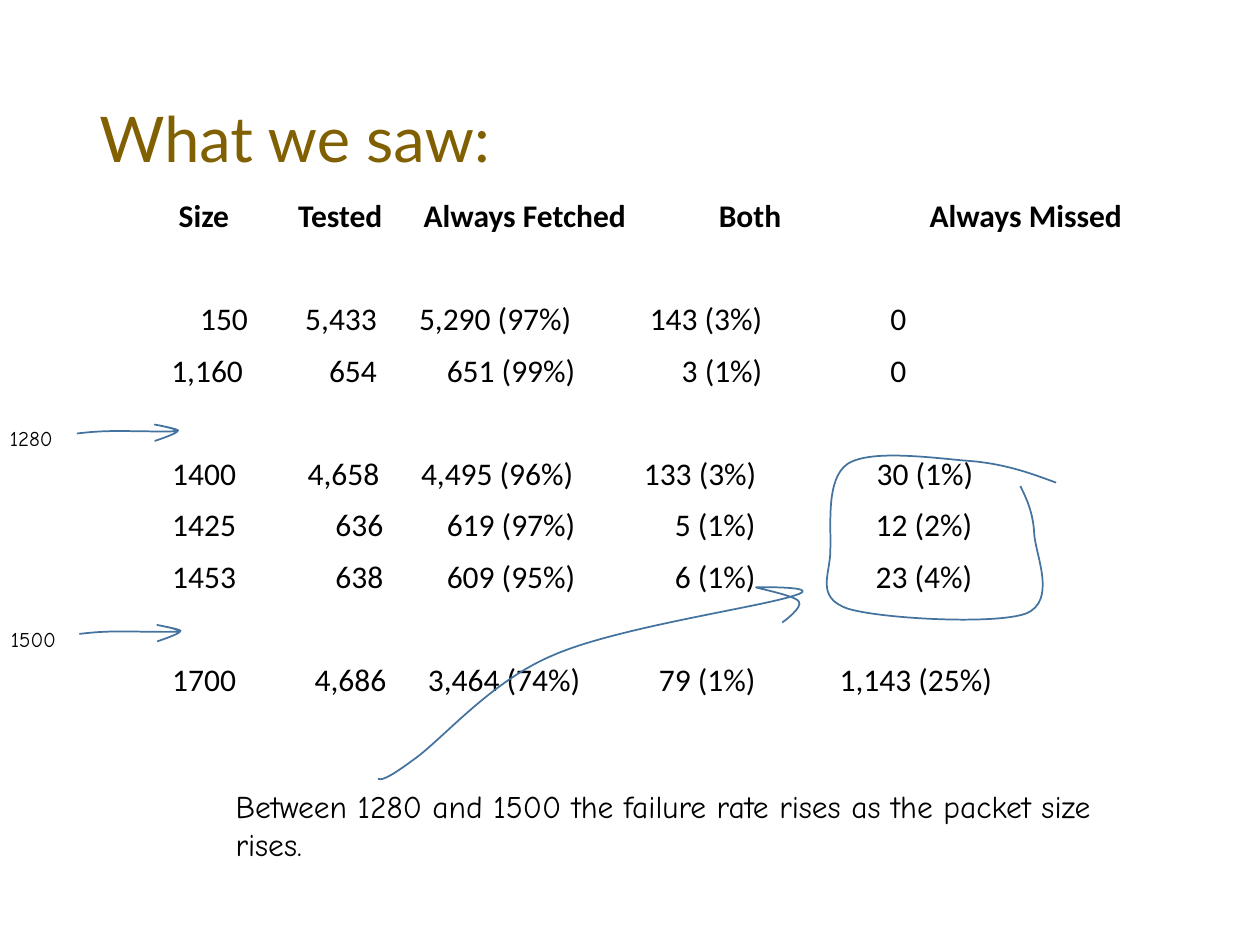
"""Build the slide of packet-size test results with its hand-drawn marks."""
import pptx
import pptx.dml.color
import pptx.enum.text
import pptx.oxml.ns
import pptx.util
from lxml import etree
from pptx.util import Cm, Pt

THEME = {
    "title": ("Lato", 36, "806000"),
    "body": ("Calibri", 18, "000000"),
    "note": ("Comic Neue", 18, "000000"),
    "label": ("Comic Neue", 12, "000000"),
    "ink": "43739E",
}
QN = pptx.oxml.ns.qn


def style(p, role, bold=False):
    name, size, color = THEME[role]
    for r in p.runs:
        r.font.name, r.font.size, r.font.bold = name, Pt(size), bold
        r.font.color.rgb = pptx.dml.color.RGBColor.from_string(color)


def draw_curve(s, points):
    emu = [(Cm(x), Cm(y)) for x, y in points]
    builder = s.shapes.build_freeform(*emu[0], scale=1.0)
    builder.add_line_segments(emu[1:], close=False)
    sp = builder.convert_to_shape()
    sp.shadow.inherit = False
    sp.fill.background()
    sp.line.color.rgb = pptx.dml.color.RGBColor.from_string(THEME["ink"])
    sp.line.width = Pt(1)
    steps = list(sp.element.iter(QN("a:lnTo")))
    for i in range(0, len(steps), 3):
        curve = etree.SubElement(steps[i].getparent(), QN("a:cubicBezTo"))
        for step in steps[i:i + 3]:
            curve.append(step[0])
            step.getparent().remove(step)


prs = pptx.Presentation()
prs.slide_width, prs.slide_height = Cm(25.4), Cm(19.05)
s = prs.slides.add_slide(prs.slide_layouts[5])

title = s.shapes.title
title.left, title.top, title.width, title.height = Cm(1.75), Cm(1.02), Cm(21.9), Cm(3.68)
tf = title.text_frame
tf.text = "What we saw:"
tf.vertical_anchor = pptx.enum.text.MSO_ANCHOR.MIDDLE
p = tf.paragraphs[0]
p.alignment = pptx.enum.text.PP_ALIGN.LEFT
p.line_spacing = 0.9
style(p, "title")

rows = [
    (("Size", "Tested", "Always Fetched", "Both", "Always Missed"),
     (1.39, 4.48, 9.39, 12.52, 19.39), 0),
    (("150", "5,433", "5,290 (97%)", "143 (3%)", "0"),
     (1.77, 4.37, 8.29, 12.14, 15.04), 39.5),
    (("1,160", "654", "651 (99%)", "3 (1%)", "0"),
     (1.67, 4.37, 8.37, 12.14, 15.04), 10),
    (("1400", "4,658", "4,495 (96%)", "133 (3%)", "30 (1%)"),
     (1.53, 4.42, 8.33, 12.02, 16.39), 39.5),
    (("1425", "636", "619 (97%)", "5 (1%)", "12 (2%)"),
     (1.53, 4.5, 8.37, 12, 16.37), 10),
    (("1453", "638", "609 (95%)", "6 (1%)", "23 (4%)"),
     (1.53, 4.5, 8.37, 12, 16.37), 10),
    (("1700", "4,686", "3,464 (74%)", "79 (1%)", "1,143 (25%)"),
     (1.53, 4.56, 8.47, 12, 16.77), 39.5),
]
results = s.shapes.add_textbox(Cm(3.23), Cm(3.91), Cm(20.45), Cm(12.09))
tf = results.text_frame
tf.word_wrap = True
tf.margin_left = 0
tf.text = "\n".join("\t" + "\t".join(cells) for cells, _, _ in rows)
for i, (p, (_, stops, gap)) in enumerate(zip(tf.paragraphs, rows)):
    p.line_spacing, p.space_before = 0.9, Pt(gap)
    tabs = etree.SubElement(p._p.get_or_add_pPr(), QN("a:tabLst"))
    for stop in stops:
        etree.SubElement(tabs, QN("a:tab"), pos=str(int(Cm(stop))), algn="r")
    style(p, "body", bold=i == 0)

texts = [
    ("1280", "label", (-0.05, 8.46, 1.57, 0.76)),
    ("1500", "label", (-0.03, 12.5, 1.6, 0.76)),
    ("Between 1280 and 1500 the failure rate rises as the packet size rises.",
     "note", (4.5, 15.75, 18.82, 1.8)),
]
for text, role, box in texts:
    tf = s.shapes.add_textbox(*map(Cm, box)).text_frame
    tf.word_wrap = role == "note"
    tf.auto_size = pptx.enum.text.MSO_AUTO_SIZE.SHAPE_TO_FIT_TEXT
    tf.text = text
    style(tf.paragraphs[0], role)

arrow = [
    (1.55, 8.74), (1.8, 8.71), (2.03, 8.69), (2.39, 8.69), (2.72, 8.69),
    (3.45, 8.71), (3.58, 8.69), (3.68, 8.66), (3.12, 8.56), (3.12, 8.56),
    (3.12, 8.56), (3.56, 8.64), (3.58, 8.69), (3.58, 8.74), (3.12, 8.89),
    (3.12, 8.89),
]
loop = [
    (21.29, 9.73), (20.8, 9.55), (20.32, 9.37), (19.63, 9.3), (18.92, 9.25),
    (17.58, 9.04), (17.09, 9.35), (16.64, 9.65), (16.76, 10.62), (16.74, 11.1),
    (16.74, 11.58), (16.43, 12.04), (17.09, 12.27), (17.73, 12.47), (20.04, 12.6),
    (20.68, 12.37), (21.31, 12.12), (20.88, 11.2), (20.85, 10.77), (20.83, 10.34),
    (20.7, 10.06), (20.57, 9.8),
]
pointer = [
    (7.62, 15.7), (7.67, 15.72), (7.75, 15.75), (8.33, 15.32), (8.92, 14.91),
    (9.88, 13.74), (11.15, 13.21), (12.42, 12.65), (15.32, 12.24), (16, 12.01),
    (16.69, 11.81), (15.21, 11.84), (15.24, 11.84), (15.27, 11.86), (16.03, 12.01),
    (16.1, 12.12), (16.21, 12.24), (15.77, 12.55), (15.77, 12.55),
]
lower_arrow = [(x + 0.05, y + 4.04) for x, y in arrow]
for points in (arrow, lower_arrow, loop, pointer):
    draw_curve(s, points)

prs.save("out.pptx")
